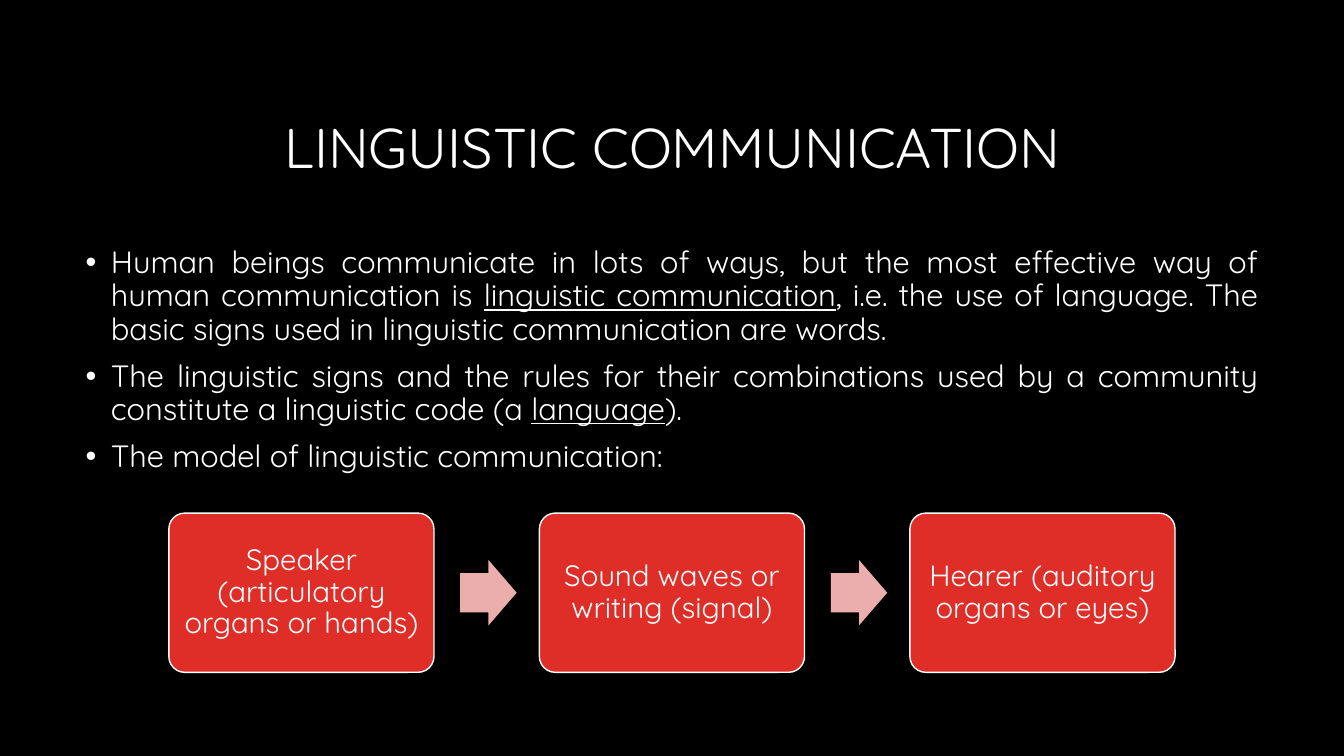
from lxml.etree import SubElement
from pptx import Presentation
from pptx.dml.color import RGBColor
from pptx.enum.shapes import MSO_SHAPE
from pptx.enum.text import MSO_ANCHOR, MSO_AUTO_SIZE, PP_ALIGN
from pptx.oxml.ns import qn
from pptx.util import Inches, Pt

TITLE = "LINGUISTIC COMMUNICATION"
# Each run: text, underlined
POINTS = [
    [("Human beings communicate in lots of ways, but the most effective way of "
      "human communication is ", False),
     ("linguistic communication", True),
     (", i.e. the use of language. The basic signs used in linguistic "
      "communication are words.", False)],
    [("The linguistic signs and the rules for their combinations used by a "
      "community constitute a linguistic code (a ", False),
     ("language", True),
     (").", False)],
    [("The model of linguistic communication:", False)],
]
STEPS = [
    "Speaker (articulatory organs or hands)",
    "Sound waves or writing (signal)",
    "Hearer (auditory organs or eyes)",
]
COLORS = {"back": "000000", "text": "FFFFFF", "card": "DF2E28", "arrow": "ECADAD"}
FONT = "Quicksand"
WIDTH, HEIGHT = 13.33, 7.5
CARD_W, CARD_H, CARD_TOP = 2.63, 1.58, 5.09
ARROW_W, ARROW_H = 0.56, 0.65
PITCH = 3.675
LEFT = (WIDTH - CARD_W - PITCH * (len(STEPS) - 1)) / 2
ARROW_LAG = 0.26  # gap from a card to its arrow


def color(name):
    return RGBColor.from_string(COLORS[name])


def place(shape, left, top, width, height):
    shape.left, shape.top = Inches(left), Inches(top)
    shape.width, shape.height = Inches(width), Inches(height)


def write(para, runs, size, align):
    para.alignment = align
    para.line_spacing = 0.9
    for text, under in runs:
        run = para.add_run()
        run.text = text
        run.font.name = FONT
        run.font.size = Pt(size)
        run.font.color.rgb = color("text")
        if under:
            run.font.underline = True


def bullet(para):
    props = para._p.get_or_add_pPr()
    props.set("marL", str(Inches(0.25)))
    props.set("indent", str(Inches(-0.25)))
    SubElement(props, qn("a:buFont"), typeface="Arial")
    SubElement(props, qn("a:buChar"), char="•")


def block(slide, kind, box, fill, adjust):
    shape = slide.shapes.add_shape(kind, *[Inches(n) for n in box])
    shape.shadow.inherit = False
    shape.fill.solid()
    shape.fill.fore_color.rgb = color(fill)
    shape.line.fill.background()
    for i, value in enumerate(adjust):
        shape.adjustments[i] = value
    return shape


def card(slide, left, text):
    shape = block(slide, MSO_SHAPE.ROUNDED_RECTANGLE,
                  (left, CARD_TOP, CARD_W, CARD_H), "card", [0.1])
    shape.line.color.rgb = color("text")
    shape.line.width = Pt(1)
    frame = shape.text_frame
    frame.word_wrap = True
    frame.vertical_anchor = MSO_ANCHOR.MIDDLE
    frame.margin_left = frame.margin_right = Inches(0.09)
    frame.margin_top = frame.margin_bottom = Inches(0.09)
    write(frame.paragraphs[0], [(text, False)], 21, PP_ALIGN.CENTER)


def main():
    deck = Presentation()
    deck.slide_width, deck.slide_height = Inches(WIDTH), Inches(HEIGHT)
    slide = deck.slides.add_slide(deck.slide_layouts[1])
    slide.background.fill.solid()
    slide.background.fill.fore_color.rgb = color("back")

    title, body = slide.placeholders
    place(title, 1.96, 0.79, 9.42, 1.41)
    place(body, 0.75, 2.4, 11.83, 4.4)
    for holder, anchor in ((title, MSO_ANCHOR.MIDDLE), (body, MSO_ANCHOR.TOP)):
        holder.text_frame.word_wrap = True
        holder.text_frame.auto_size = MSO_AUTO_SIZE.NONE
        holder.text_frame.vertical_anchor = anchor
    write(title.text_frame.paragraphs[0], [(TITLE, False)], 40, PP_ALIGN.CENTER)

    frame = body.text_frame
    for i, runs in enumerate(POINTS):
        para = frame.add_paragraph() if i else frame.paragraphs[0]
        bullet(para)
        para.space_before = Pt(10 if i else 0)
        write(para, runs, 22, PP_ALIGN.JUSTIFY)

    for i, text in enumerate(STEPS):
        left = LEFT + i * PITCH
        card(slide, left, text)
        if i < len(STEPS) - 1:
            box = (left + CARD_W + ARROW_LAG, CARD_TOP + (CARD_H - ARROW_H) / 2,
                   ARROW_W, ARROW_H)
            block(slide, MSO_SHAPE.RIGHT_ARROW, box, "arrow", [0.6, 0.5])

    deck.save("out.pptx")


if __name__ == "__main__":
    main()
